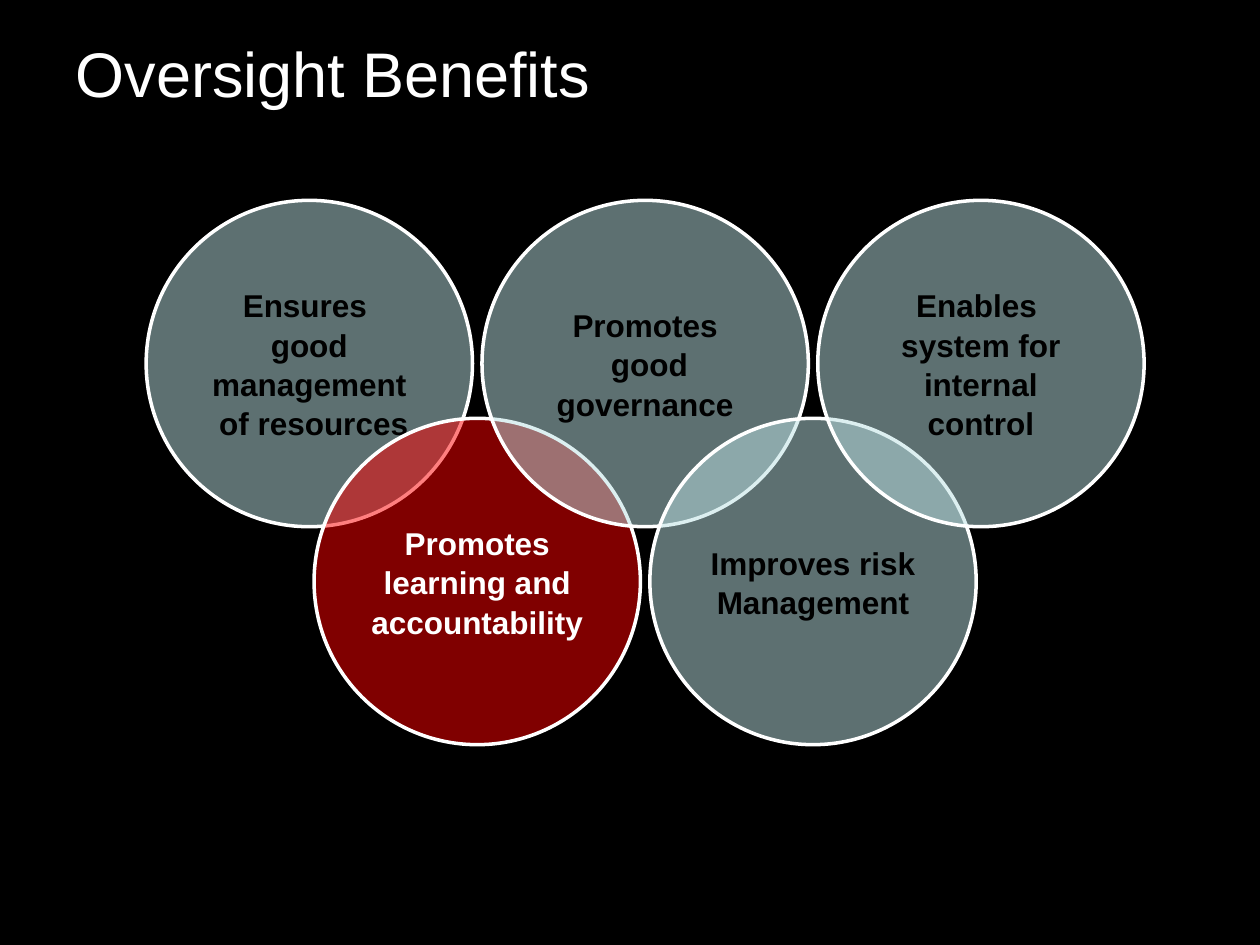
from dataclasses import dataclass

from lxml.etree import SubElement
from pptx import Presentation
from pptx.dml.color import RGBColor
from pptx.enum.shapes import MSO_SHAPE
from pptx.enum.text import MSO_ANCHOR, PP_ALIGN
from pptx.oxml.ns import qn
from pptx.util import Inches, Pt


@dataclass(frozen=True)
class Theme:
    font: str = "Arial"
    background: str = "000000"
    light: str = "FFFFFF"
    dark: str = "000000"
    circle: str = "BBE0E3"
    highlight: str = "FF0000"
    opacity: int = 50
    title_size: int = 36
    label_size: int = 18
    outline_width: int = 2
    line_spacing: float = 1.04


THEME = Theme()

TITLE = "Oversight Benefits"
BENEFITS = [
    ("Ensures \ngood management\n of resources", False),
    ("Promotes learning and accountability", True),
    ("Promotes\n good\ngovernance", False),
    ("Improves risk\nManagement", False),
    ("Enables \nsystem for\n internal \ncontrol", False),
]

DIAMETER = 2.59
FIRST_LEFT, LAST_LEFT = 1.16, 6.49
ROW_TOPS = (1.59, 3.32)
INSET = 0.07


def style_paragraph(paragraph, size, color, bold, alignment):
    paragraph.alignment = alignment
    for span in paragraph.runs:
        span.font.name = THEME.font
        span.font.size = Pt(size)
        span.font.bold = bold
        span.font.color.rgb = RGBColor.from_string(color)


def add_title(page):
    box = page.shapes.title
    box.left, box.top, box.width, box.height = map(Inches, (0.5, 0, 9, 1.15))
    box.text_frame.text = TITLE
    box.text_frame.vertical_anchor = MSO_ANCHOR.MIDDLE
    style_paragraph(box.text_frame.paragraphs[0], THEME.title_size,
                    THEME.light, False, PP_ALIGN.LEFT)


def add_circle(page, left, top, label, highlighted):
    circle = page.shapes.add_shape(MSO_SHAPE.OVAL, Inches(left), Inches(top),
                                   Inches(DIAMETER), Inches(DIAMETER))
    circle.shadow.inherit = False
    circle.fill.solid()
    circle.fill.fore_color.rgb = RGBColor.from_string(
        THEME.highlight if highlighted else THEME.circle)
    color = circle._element.spPr.find(qn("a:solidFill")).find(qn("a:srgbClr"))
    SubElement(color, qn("a:alpha")).set("val", str(THEME.opacity * 1000))
    circle.line.color.rgb = RGBColor.from_string(THEME.light)
    circle.line.width = Pt(THEME.outline_width)

    frame = circle.text_frame
    frame.word_wrap = True
    frame.vertical_anchor = MSO_ANCHOR.MIDDLE
    frame.margin_left = frame.margin_right = Inches(INSET)
    frame.margin_top = frame.margin_bottom = Inches(INSET)
    frame.text = label
    for paragraph in frame.paragraphs:
        paragraph.line_spacing = THEME.line_spacing
        style_paragraph(paragraph, THEME.label_size,
                        THEME.light if highlighted else THEME.dark,
                        True, PP_ALIGN.CENTER)


def main():
    deck = Presentation()
    deck.slide_width, deck.slide_height = Inches(10), Inches(7.5)
    page = deck.slides.add_slide(deck.slide_layouts[5])
    page.background.fill.solid()
    page.background.fill.fore_color.rgb = RGBColor.from_string(THEME.background)

    add_title(page)
    step = (LAST_LEFT - FIRST_LEFT) / (len(BENEFITS) - 1)
    for index, (label, highlighted) in enumerate(BENEFITS):
        add_circle(page, FIRST_LEFT + index * step, ROW_TOPS[index % 2],
                   label, highlighted)
    deck.save("out.pptx")


if __name__ == "__main__":
    main()
